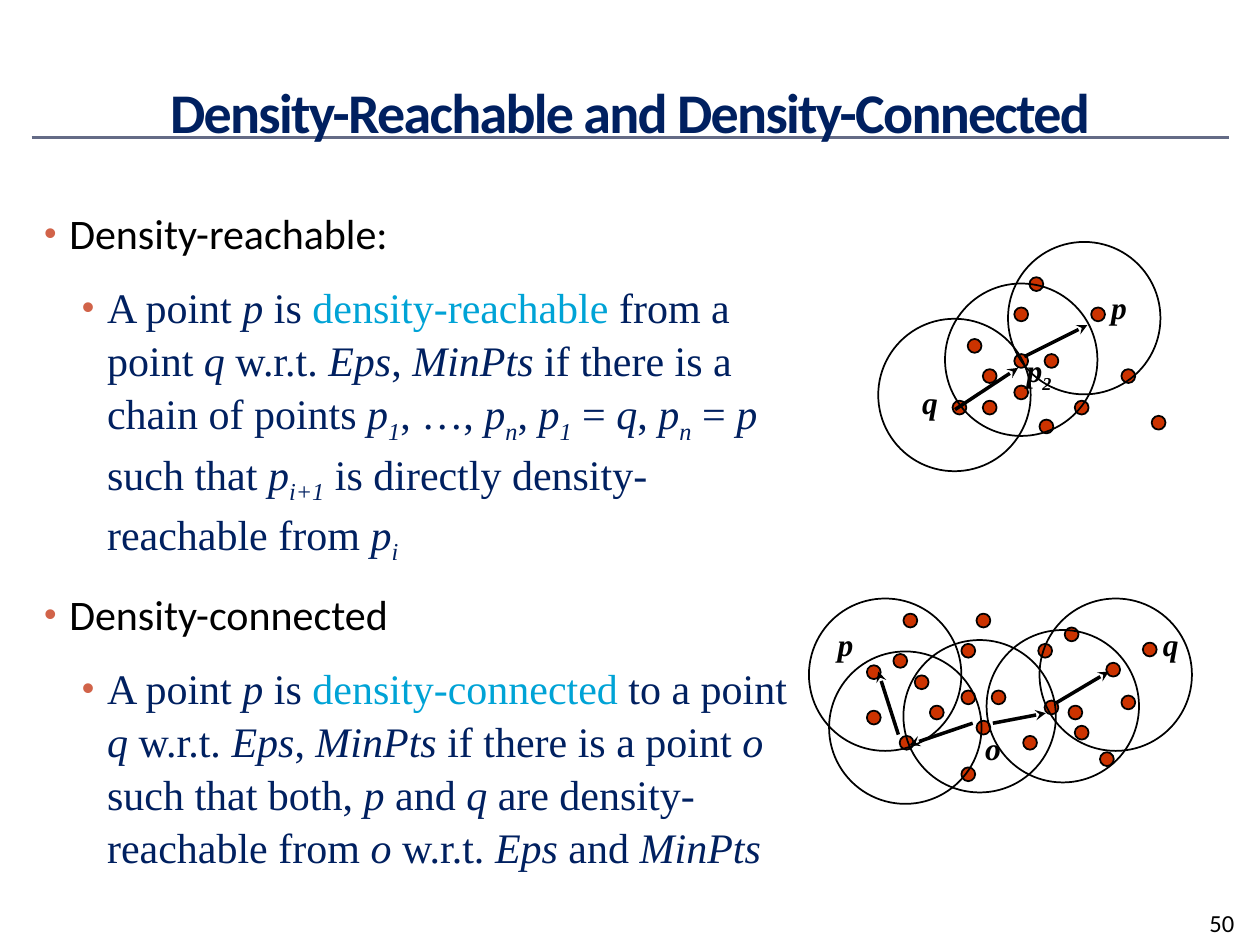
from lxml import etree
from pptx import Presentation
from pptx import util as u
from pptx.dml.color import RGBColor
from pptx.enum import shapes, text
from pptx.oxml import ns

EMU_PER_PX = 9144
DOT = 11
CIRCLE = 121

NAVY = RGBColor(0x00, 0x20, 0x60)
CYAN = RGBColor(0x00, 0xA3, 0xD6)
BLACK = RGBColor(0x00, 0x00, 0x00)
RED = RGBColor(0xCC, 0x33, 0x00)
SLATE = RGBColor(0x64, 0x6B, 0x86)
RUST = RGBColor(0xD1, 0x63, 0x49)

SANS = "Calibri"
SERIF = "Times New Roman"

REACHABLE = [
    ("A point ", ""), ("p", "i"), (" is ", ""), ("density-reachable", "key"),
    (" from a point ", ""), ("q", "i"), (" w.r.t. ", ""), ("Eps", "i"),
    (", ", ""), ("MinPts", "i"), (" if there is a chain of points ", ""),
    ("p", "i"), ("1", "sub"), (", …, ", ""), ("p", "i"), ("n", "sub"),
    (", ", ""), ("p", "i"), ("1", "sub"), (" = ", ""), ("q", "i"),
    (", ", ""), ("p", "i"), ("n", "sub"), (" = ", ""), ("p", "i"),
    (" such that ", ""), ("p", "i"), ("i+1", "sub"),
    (" is directly density-reachable from ", ""), ("p", "i"), ("i", "sub"),
]
CONNECTED = [
    ("A point ", ""), ("p", "i"), (" is ", ""), ("density-connected", "key"),
    (" to a point ", ""), ("q", "i"), (" w.r.t. ", ""), ("Eps", "i"),
    (", ", ""), ("MinPts", "i"), (" if there is a point ", ""), ("o ", "i"),
    ("such that both, ", ""), ("p", "i"), (" and ", ""), ("q", "i"),
    (" are density-reachable from ", ""), ("o", "i"), (" w.r.t. ", ""),
    ("Eps", "i"), (" and ", ""), ("MinPts", "i"),
]

REACHABLE_DIAGRAM = {
    "dots": [(768, 269), (805, 281), (805, 244), (756, 318), (780, 293),
             (780, 318), (825, 333), (817, 220), (890, 293), (866, 244),
             (805, 306), (829, 281), (853, 318), (914, 330)],
    "circles": [(750, 225), (697, 253), (800, 192)],
    "labels": [("p", "", 872, 224), ("q", "", 722, 299), ("p", "2", 805, 274)],
    "arrows": [(813, 283, 863, 258), (758, 325, 808, 292)],
}
CONNECTED_DIAGRAM = {
    "dots": [(726, 536), (763, 548), (763, 511), (714, 584), (738, 560),
             (763, 609), (775, 572), (775, 487), (848, 560), (824, 511),
             (688, 564), (787, 548), (812, 584), (873, 597), (890, 552),
             (829, 556), (853, 576), (907, 510), (845, 498), (878, 526),
             (709, 519), (688, 528), (717, 487)],
    "circles": [(658, 517), (717, 508), (783, 500), (825, 475), (642, 475)],
    "labels": [("p", "", 655, 491), ("q", "", 913, 491), ("o", "", 772, 574)],
    "arrows": [(772, 574, 722, 591), (788, 574, 830, 566),
               (713, 583, 697, 533), (838, 558, 880, 533)],
}


def px(*lengths):
    return [u.Emu(length * EMU_PER_PX) for length in lengths]


def add_run(paragraph, words, size, face, color, bold=False, italic=False, subscript=False):
    run = paragraph.add_run()
    run.text = words
    font = run.font
    font.size, font.name = u.Pt(size), face
    font.bold, font.italic = bold, italic
    font.color.rgb = color
    if subscript:
        run._r.get_or_add_rPr().set("baseline", "-25000")
    return run


def add_bullet(paragraph, indent):
    properties = paragraph._p.get_or_add_pPr()
    properties.set("marL", str(px(indent)[0]))
    properties.set("indent", str(px(-20)[0]))
    color = etree.SubElement(properties, ns.qn("a:buClr"))
    etree.SubElement(color, ns.qn("a:srgbClr"), val=str(RUST))
    etree.SubElement(properties, ns.qn("a:buSzPct"), val="85000")
    etree.SubElement(properties, ns.qn("a:buFont"), typeface="Arial")
    etree.SubElement(properties, ns.qn("a:buChar"), char="•")


def place(shape, left, top, width, height):
    shape.left, shape.top, shape.width, shape.height = px(left, top, width, height)


def fill_title(title):
    place(title, 0, 42, 1000, 92)
    frame = title.text_frame
    frame.auto_size = text.MSO_AUTO_SIZE.NONE
    frame.vertical_anchor = text.MSO_ANCHOR.MIDDLE
    paragraph = frame.paragraphs[0]
    paragraph.alignment = text.PP_ALIGN.CENTER
    run = add_run(paragraph, "Density-Reachable and Density-Connected", 32, SANS, NAVY, bold=True)
    run._r.get_or_add_rPr().set("spc", "-100")


def fill_body(body):
    place(body, 25, 158, 617, 550)
    frame = body.text_frame
    frame.auto_size = text.MSO_AUTO_SIZE.NONE
    sections = [("Density-reachable:", REACHABLE), ("Density-connected", CONNECTED)]
    for number, (heading, definition) in enumerate(sections):
        paragraph = frame.add_paragraph() if number else frame.paragraphs[0]
        add_run(paragraph, heading, 24, SANS, BLACK)
        detail = frame.add_paragraph()
        detail.level = 1
        for words, style in definition:
            add_run(detail, words, 24, SERIF, CYAN if style == "key" else NAVY,
                    italic=style in ("i", "sub"), subscript=style == "sub")
    for paragraph in frame.paragraphs:
        paragraph.line_spacing = 1.05
        paragraph.space_before = u.Pt(12)
        add_bullet(paragraph, 50 if paragraph.level else 20)


def add_ellipse(slide, left, top, diameter, fill=None):
    ellipse = slide.shapes.add_shape(
        shapes.MSO_SHAPE.OVAL, *px(left, top, diameter, diameter))
    ellipse.shadow.inherit = False
    if fill is None:
        ellipse.fill.background()
    else:
        ellipse.fill.solid()
        ellipse.fill.fore_color.rgb = fill
    ellipse.line.color.rgb = BLACK
    ellipse.line.width = u.Pt(1)


def add_line(slide, ends, color, width, arrow=False):
    line = slide.shapes.add_connector(shapes.MSO_CONNECTOR.STRAIGHT, *px(*ends))
    line.line.color.rgb = color
    line.line.width = u.Pt(width)
    if arrow:
        etree.SubElement(line.line._get_or_add_ln(), ns.qn("a:tailEnd"), type="stealth")
    etree.SubElement(line._element.spPr, ns.qn("a:effectLst"))
    return line


def add_text_box(slide, left, top, width, height):
    box = slide.shapes.add_textbox(*px(left, top, width, height))
    box.text_frame.word_wrap = True
    return box.text_frame


def add_diagram(slide, diagram):
    for left, top in diagram["dots"]:
        add_ellipse(slide, left, top, DOT, RED)
    for left, top in diagram["circles"]:
        add_ellipse(slide, left, top, CIRCLE)
    for letter, index, left, top in diagram["labels"]:
        frame = add_text_box(slide, left, top, 67 if index else 42, 40 if index else 50)
        paragraph = frame.paragraphs[0]
        add_run(paragraph, letter, 18, SERIF, BLACK, bold=True, italic=True)
        if index:
            add_run(paragraph, index, 18, SERIF, BLACK, bold=True, italic=True, subscript=True)
    for ends in diagram["arrows"]:
        add_line(slide, ends, BLACK, 2, arrow=True)


def main():
    presentation = Presentation()
    presentation.slide_width, presentation.slide_height = px(1000, 750)
    slide = presentation.slides.add_slide(presentation.slide_layouts[1])
    title, body = slide.placeholders
    rule = add_line(slide, (25, 109, 975, 109), SLATE, 1.5)
    title.element.addprevious(rule.element)
    fill_title(title)
    fill_body(body)
    add_diagram(slide, REACHABLE_DIAGRAM)
    add_diagram(slide, CONNECTED_DIAGRAM)
    page_number = add_text_box(slide, 950, 714, 50, 36)
    page_number.vertical_anchor = text.MSO_ANCHOR.MIDDLE
    add_run(page_number.paragraphs[0], "50", 14, SANS, BLACK)
    presentation.save("out.pptx")


if __name__ == "__main__":
    main()
